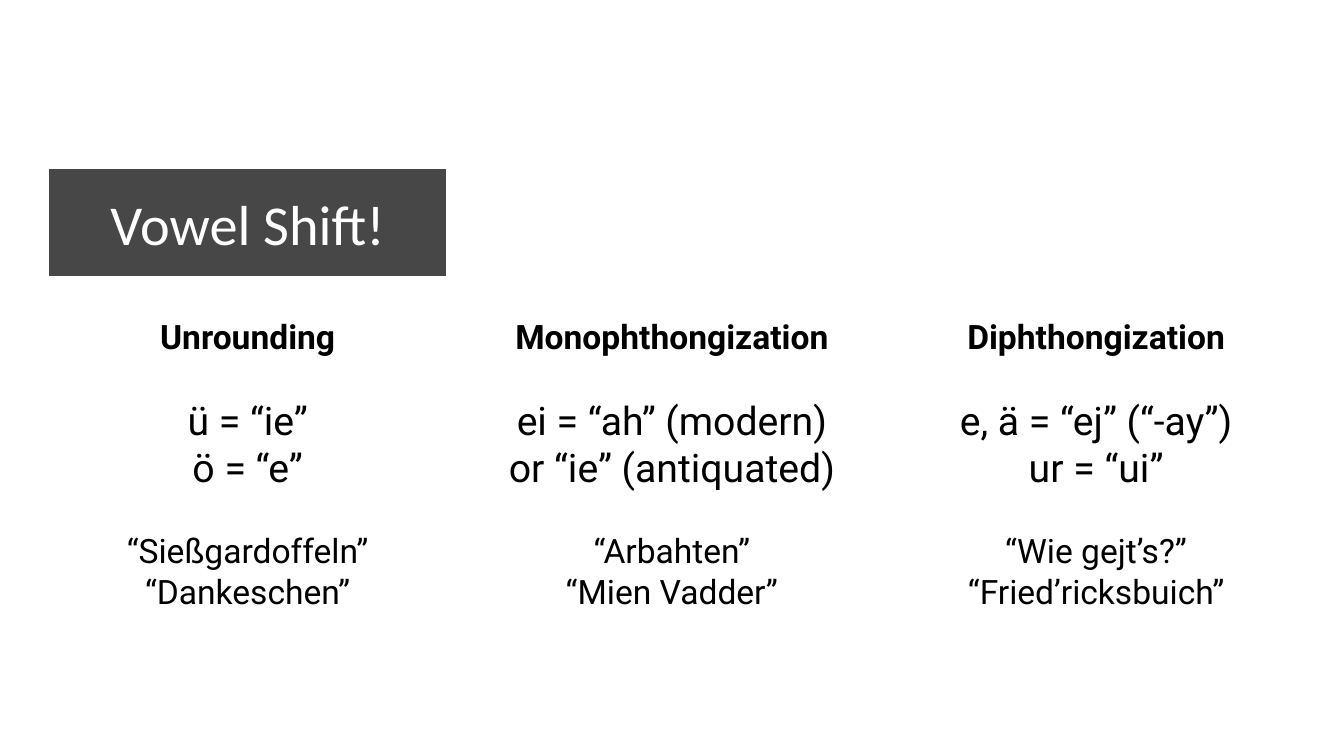
from pptx import Presentation
from pptx.dml.color import RGBColor
from pptx.enum.shapes import MSO_SHAPE
from pptx.enum.text import MSO_ANCHOR, PP_ALIGN
from pptx.oxml.ns import qn
from pptx.util import Emu, Pt
from lxml.etree import SubElement

PX = 9525  # 96 px to the inch
WHITE, BLACK = "FFFFFF", "000000"
LEFT, WIDE, STEP = 33, 288, 303
GAP = 21.4

COLUMNS = [
    ("Unrounding",
     ("ü = “ie”", "ö = “e”"),
     ("“Sießgardoffeln”", "“Dankeschen”")),
    ("Monophthongization",
     ("ei = “ah” (modern)", "or “ie” (antiquated)"),
     ("“Arbahten”", "“Mien Vadder”")),
    ("Diphthongization",
     ("e, ä = “ej” (“-ay”)", "ur = “ui”"),
     ("“Wie gejt’s?”", "“Fried’ricksbuich”")),
]


def px(n):
    return Emu(n * PX)


def color(code):
    return RGBColor.from_string(code)


class Deck:
    def __init__(self, wide, high):
        self.show = Presentation()
        self.show.slide_width, self.show.slide_height = px(wide), px(high)
        self.slide = None
        self.alpha = 72
        self.inset = 10

    def page(self):
        self.slide = self.show.slides.add_slide(self.show.slide_layouts[6])

    def panel(self, x, y, w, h, fill):
        """Add a see-through box with a white edge and return its text frame."""
        box = self.slide.shapes.add_shape(
            MSO_SHAPE.RECTANGLE, px(x), px(y), px(w), px(h))
        box.shadow.inherit = False
        box.fill.solid()
        box.fill.fore_color.rgb = color(fill)
        tint = box.fill._xPr.find(qn("a:solidFill"))[0]
        SubElement(tint, qn("a:alpha"), val=str(self.alpha * 1000))
        box.line.color.rgb = color(WHITE)
        box.line.width = Pt(3)
        frame = box.text_frame
        frame.word_wrap = True
        frame.vertical_anchor = MSO_ANCHOR.MIDDLE
        frame.margin_left = frame.margin_right = px(self.inset)
        frame.margin_top = frame.margin_bottom = px(self.inset)
        return frame

    def line(self, frame, text, size, font="Roboto", ink=BLACK,
             bold=False, gap=0):
        """Add a centred paragraph, using the empty first one if there is one."""
        first = frame.paragraphs[0]
        para = frame.add_paragraph() if first.runs else first
        para.alignment = PP_ALIGN.CENTER
        para.space_before = Pt(gap)
        run = para.add_run()
        run.text = text
        run.font.size = Pt(size)
        run.font.name = font
        run.font.bold = bold
        run.font.color.rgb = color(ink)


def main():
    deck = Deck(960, 540)
    deck.page()
    title = deck.panel(LEFT, 119, WIDE, 80, BLACK)
    deck.line(title, "Vowel Shift!", 30.2, "Calibri", WHITE)

    for i, (head, rules, words) in enumerate(COLUMNS):
        frame = deck.panel(LEFT + i * STEP, 212, WIDE, 238, WHITE)
        deck.line(frame, head, 18, bold=True)
        for group, size in ((rules, 21), (words, 18)):
            for j, text in enumerate(group):
                deck.line(frame, text, size, gap=0 if j else GAP)

    deck.show.save("out.pptx")


if __name__ == "__main__":
    main()
